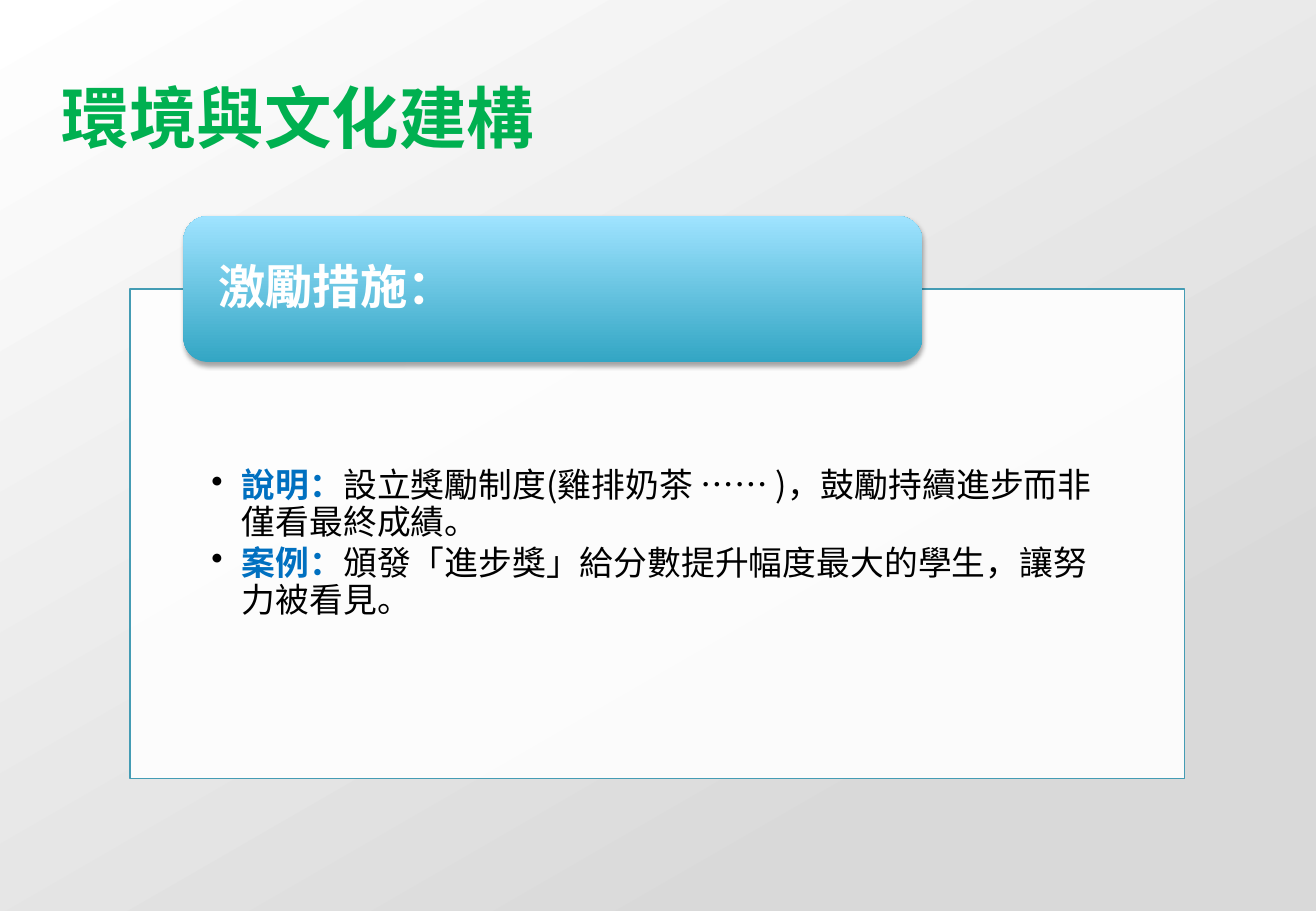
from lxml.etree import SubElement
from pptx import Presentation
from pptx.dml.color import RGBColor
from pptx.enum.shapes import MSO_SHAPE
from pptx.enum.text import MSO_ANCHOR, MSO_AUTO_SIZE, PP_ALIGN
from pptx.oxml.ns import qn
from pptx.util import Inches, Pt

COLORS = {
    "white": "FFFFFF", "gray": "D9D9D9", "green": "00B050", "blue": "0070C0",
    "black": "000000", "border": "449CB4", "teal": "33A6C4", "sky": "9FE3FF",
}


class SlideBuilder:
    """Holds the style and the current slide."""

    font_name = "Noto Sans CJK SC"

    def __init__(self, slide):
        self.slide = slide

    def color(self, name):
        return RGBColor.from_string(COLORS[name])

    def gradient(self, fill, angle, stops):
        fill.gradient()
        fill.gradient_angle = angle
        for stop, (position, name) in zip(fill.gradient_stops, stops):
            stop.position = position
            stop.color.rgb = self.color(name)

    def style_run(self, run, size, color, bold):
        run.font.name = self.font_name
        run.font.size = Pt(size)
        run.font.bold = bold
        run.font.color.rgb = self.color(color)
        SubElement(run.font._element, qn("a:ea"), typeface=self.font_name)

    def set_frame(self, shape, anchor, margins):
        frame = shape.text_frame
        frame.word_wrap = True
        frame.vertical_anchor = anchor
        (frame.margin_left, frame.margin_top,
         frame.margin_right, frame.margin_bottom) = map(Inches, margins)
        return frame

    def title(self, text, box):
        title = self.slide.shapes.add_textbox(*map(Inches, box))
        frame = self.set_frame(title, MSO_ANCHOR.TOP, (0, 0, 0, 0))
        frame.auto_size = MSO_AUTO_SIZE.SHAPE_TO_FIT_TEXT
        frame.text = text
        self.style_run(frame.paragraphs[0].runs[0], 40, "green", True)

    def panel(self, points, box):
        panel = self.slide.shapes.add_shape(MSO_SHAPE.RECTANGLE, *map(Inches, box))
        panel.shadow.inherit = False
        panel.fill.solid()
        panel.fill.fore_color.rgb = self.color("white")
        tint = panel._element.spPr.find(qn("a:solidFill")).find(qn("a:srgbClr"))
        SubElement(tint, qn("a:alpha"), val="90000")
        panel.line.color.rgb = self.color("border")
        panel.line.width = Pt(0.75)
        frame = self.set_frame(panel, MSO_ANCHOR.TOP, (0.67, 1.48, 0.67, 0.16))
        for index, (label, detail) in enumerate(points):
            point = frame.add_paragraph() if index else frame.paragraphs[0]
            self.bullet(point, label, detail)

    def bullet(self, point, label, detail):
        point.alignment = PP_ALIGN.LEFT
        point.level = 1
        point.line_spacing = 0.9
        point.space_after = Pt(3)
        properties = point._p.get_or_add_pPr()
        properties.set("marL", str(Inches(0.25)))
        properties.set("indent", str(Inches(-0.25)))
        bullet_color = SubElement(properties, qn("a:buClr"))
        SubElement(bullet_color, qn("a:srgbClr"), val=COLORS["black"])
        SubElement(properties, qn("a:buChar"), char="•")
        for text, color, bold in ((label, "blue", True), (detail, "black", False)):
            run = point.add_run()
            run.text = text
            self.style_run(run, 20, color, bold)

    def heading(self, text, box):
        heading = self.slide.shapes.add_shape(
            MSO_SHAPE.ROUNDED_RECTANGLE, *map(Inches, box))
        self.gradient(heading.fill, 90, ((0, "teal"), (1, "sky")))
        heading.line.fill.background()
        heading.shadow.inherit = False
        effects = heading._element.spPr.find(qn("a:effectLst"))
        shadow = SubElement(effects, qn("a:outerShdw"), blurRad=str(Pt(3.1)),
                            dist=str(Pt(1.8)), dir="5400000", rotWithShape="0")
        shade = SubElement(shadow, qn("a:srgbClr"), val=COLORS["black"])
        SubElement(shade, qn("a:alpha"), val="35000")
        frame = self.set_frame(heading, MSO_ANCHOR.MIDDLE, (0.23, 0, 0.23, 0))
        frame.text = text
        frame.paragraphs[0].alignment = PP_ALIGN.LEFT
        frame.paragraphs[0].line_spacing = 0.9
        self.style_run(frame.paragraphs[0].runs[0], 28, "white", True)


def main():
    presentation = Presentation()
    presentation.slide_width = Inches(10.83)
    presentation.slide_height = Inches(7.5)
    slide = presentation.slides.add_slide(presentation.slide_layouts[6])
    builder = SlideBuilder(slide)
    builder.gradient(slide.background.fill, 300, ((0, "white"), (0.8, "gray")))
    builder.title("環境與文化建構", (0.51, 0.63, 10.31, 0.67))
    builder.panel((
        ("說明：", "設立獎勵制度(雞排奶茶 …… )，鼓勵持續進步而非僅看最終成績。"),
        ("案例：", "頒發「進步獎」給分數提升幅度最大的學生，讓努力被看見。"),
    ), (1.07, 2.38, 8.68, 4.03))
    builder.heading("激勵措施：", (1.51, 1.78, 6.08, 1.2))
    presentation.save("out.pptx")


if __name__ == "__main__":
    main()
